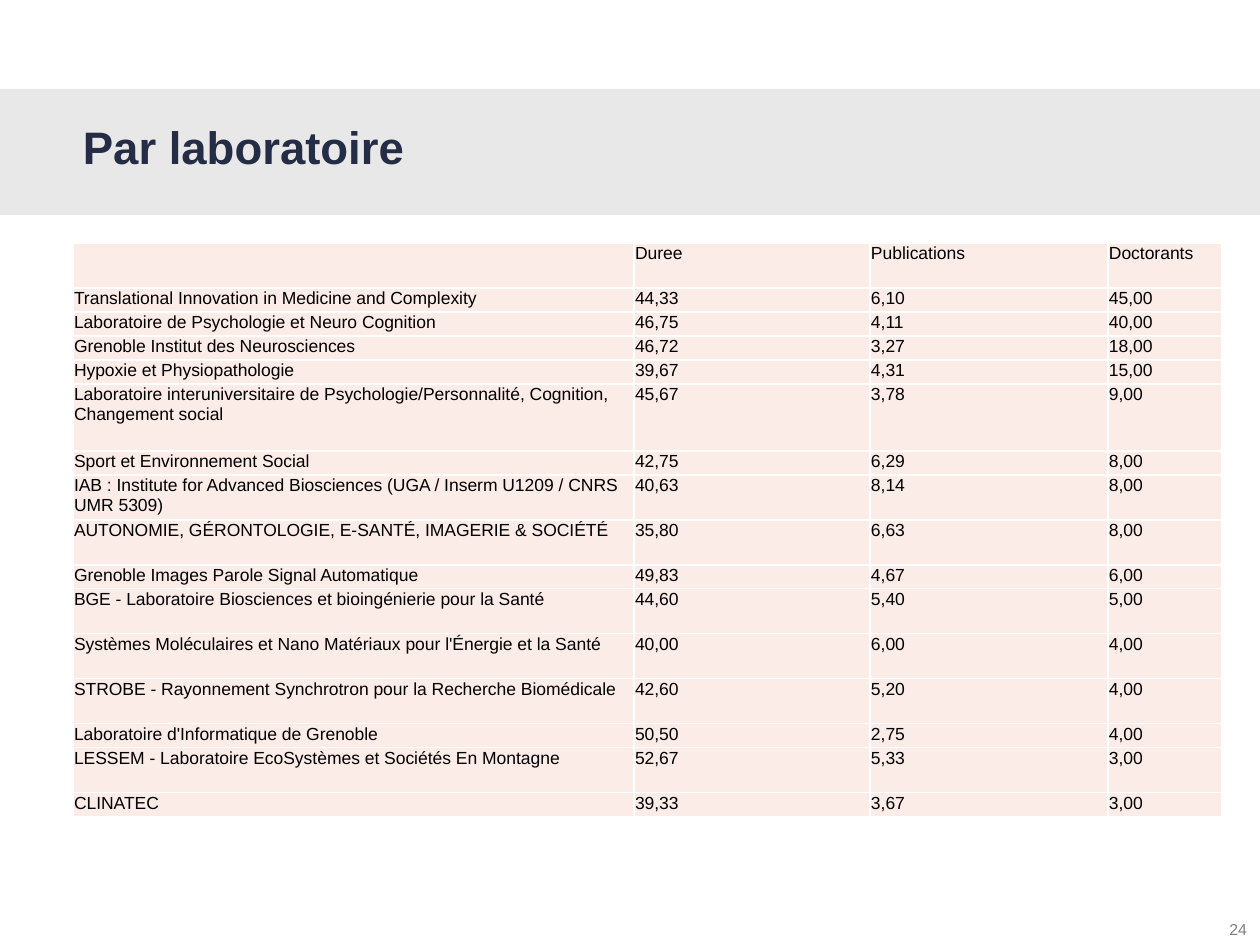
import dataclasses

import lxml.etree
import pptx
import pptx.dml.color
import pptx.enum.shapes
import pptx.enum.text
import pptx.oxml.ns
import pptx.util

PX_PER_INCH = 126
FONT = "Arial"
CELL_FILL = "FCECE7"
COL_WIDTHS = (561, 236, 238, 114)
ONE_LINE, TWO_LINES, THREE_LINES = 24, 45, 67


@dataclasses.dataclass
class Box:
    left: int
    top: int
    width: int
    height: int


@dataclasses.dataclass
class Style:
    size: int
    color: str
    bold: bool = False


@dataclasses.dataclass
class Row:
    values: tuple[str, str, str, str]
    height: int = ONE_LINE


ROWS = (
    Row(("", "Duree", "Publications", "Doctorants"), TWO_LINES),
    Row(("Translational Innovation in Medicine and Complexity", "44,33", "6,10", "45,00")),
    Row(("Laboratoire de Psychologie et Neuro Cognition", "46,75", "4,11", "40,00")),
    Row(("Grenoble Institut des Neurosciences", "46,72", "3,27", "18,00")),
    Row(("Hypoxie et Physiopathologie", "39,67", "4,31", "15,00")),
    Row(("Laboratoire interuniversitaire de Psychologie/Personnalité, Cognition, "
         "Changement social", "45,67", "3,78", "9,00"), THREE_LINES),
    Row(("Sport et Environnement Social", "42,75", "6,29", "8,00")),
    Row(("IAB : Institute for Advanced Biosciences (UGA / Inserm U1209 / CNRS "
         "UMR 5309)", "40,63", "8,14", "8,00"), TWO_LINES),
    Row(("AUTONOMIE, GÉRONTOLOGIE, E-SANTÉ, IMAGERIE & SOCIÉTÉ",
         "35,80", "6,63", "8,00"), TWO_LINES),
    Row(("Grenoble Images Parole Signal Automatique", "49,83", "4,67", "6,00")),
    Row(("BGE - Laboratoire Biosciences et bioingénierie pour la Santé",
         "44,60", "5,40", "5,00"), TWO_LINES),
    Row(("Systèmes Moléculaires et Nano Matériaux pour l'Énergie et la Santé",
         "40,00", "6,00", "4,00"), TWO_LINES),
    Row(("STROBE - Rayonnement Synchrotron pour la Recherche Biomédicale",
         "42,60", "5,20", "4,00"), TWO_LINES),
    Row(("Laboratoire d'Informatique de Grenoble", "50,50", "2,75", "4,00")),
    Row(("LESSEM - Laboratoire EcoSystèmes et Sociétés En Montagne",
         "52,67", "5,33", "3,00"), TWO_LINES),
    Row(("CLINATEC", "39,33", "3,67", "3,00")),
)


def px(n: int) -> int:
    return round(n * 914400 / PX_PER_INCH)


def place(box: Box) -> tuple[int, ...]:
    return tuple(px(n) for n in dataclasses.astuple(box))


def rgb(color: str) -> pptx.dml.color.RGBColor:
    return pptx.dml.color.RGBColor.from_string(color)


def sub(parent, tag: str, **attrs: str):
    return lxml.etree.SubElement(parent, pptx.oxml.ns.qn(tag), **attrs)


def set_margins(target, left: int, top: int, right: int, bottom: int) -> None:
    target.margin_left, target.margin_top = px(left), px(top)
    target.margin_right, target.margin_bottom = px(right), px(bottom)


def write(p, text: str, style: Style) -> None:
    r = p.add_run()
    r.text = text
    r.font.name, r.font.size, r.font.bold = FONT, pptx.util.Pt(style.size), style.bold
    r.font.color.rgb = rgb(style.color)


def add_band(s, box: Box, color: str, opacity: int) -> None:
    sp = s.shapes.add_shape(pptx.enum.shapes.MSO_SHAPE.RECTANGLE, *place(box))
    sp.shadow.inherit = False
    sp.line.fill.background()
    sp.fill.solid()
    sp.fill.fore_color.rgb = rgb(color)
    clr = sp.fill._xPr.find(".//" + pptx.oxml.ns.qn("a:srgbClr"))
    sub(clr, "a:alpha", val=str(opacity * 1000))


def add_text(s, box: Box, text: str, style: Style, margins: tuple[int, int, int, int],
             align=pptx.enum.text.PP_ALIGN.LEFT, wrap: bool = True) -> None:
    tf = s.shapes.add_textbox(*place(box)).text_frame
    tf.word_wrap = wrap
    set_margins(tf, *margins)
    p = tf.paragraphs[0]
    p.alignment = align
    write(p, text, style)


def add_borders(cell, color: str, width: int) -> None:
    tc_pr = cell._tc.get_or_add_tcPr()
    for i, side in enumerate("LRTB"):
        ln = sub(tc_pr, f"a:ln{side}", w=str(pptx.util.Pt(width)))
        sub(sub(ln, "a:solidFill"), "a:srgbClr", val=color)
        tc_pr.insert(i, ln)


def add_lab_table(s, left: int, top: int, rows: tuple[Row, ...], style: Style) -> None:
    box = Box(left, top, sum(COL_WIDTHS), sum(row.height for row in rows))
    table = s.shapes.add_table(len(rows), len(COL_WIDTHS), *place(box)).table
    table.horz_banding = table.first_row = False
    for col, width in zip(table.columns, COL_WIDTHS):
        col.width = px(width)
    for i, row in enumerate(rows):
        table.rows[i].height = px(row.height)
        for j, value in enumerate(row.values):
            cell = table.cell(i, j)
            set_margins(cell, 1, 1, 1, 0)
            cell.fill.solid()
            cell.fill.fore_color.rgb = rgb(CELL_FILL)
            add_borders(cell, "FFFFFF", 1)
            p = cell.text_frame.paragraphs[0]
            if value:
                write(p, value, style)
            else:
                p.font.size = pptx.util.Pt(style.size)


def main() -> None:
    prs = pptx.Presentation()
    prs.slide_width, prs.slide_height = px(1260), px(945)
    s = prs.slides.add_slide(prs.slide_layouts[6])
    add_band(s, Box(-1, 89, 1261, 126), "D9D9D9", 59)
    add_text(s, Box(1215, 914, 45, 32), "24", Style(9, "7F7F7F"), (13, 6, 13, 6),
             pptx.enum.text.PP_ALIGN.RIGHT, wrap=False)
    add_text(s, Box(72, 107, 1149, 98), "Par laboratoire",
             Style(26, "242D45", bold=True), (11, 12, 11, 6))
    add_lab_table(s, 73, 243, ROWS, Style(10, "000000"))
    prs.save("out.pptx")


if __name__ == "__main__":
    main()
